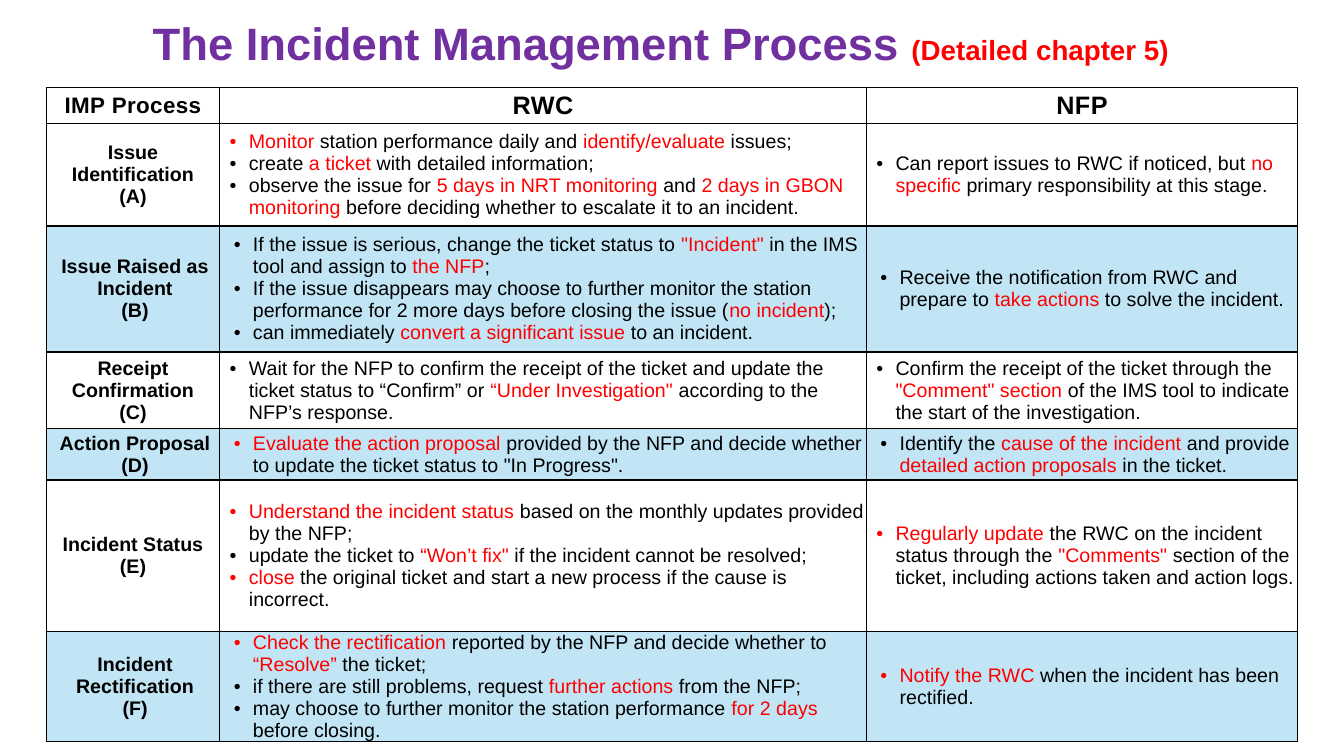
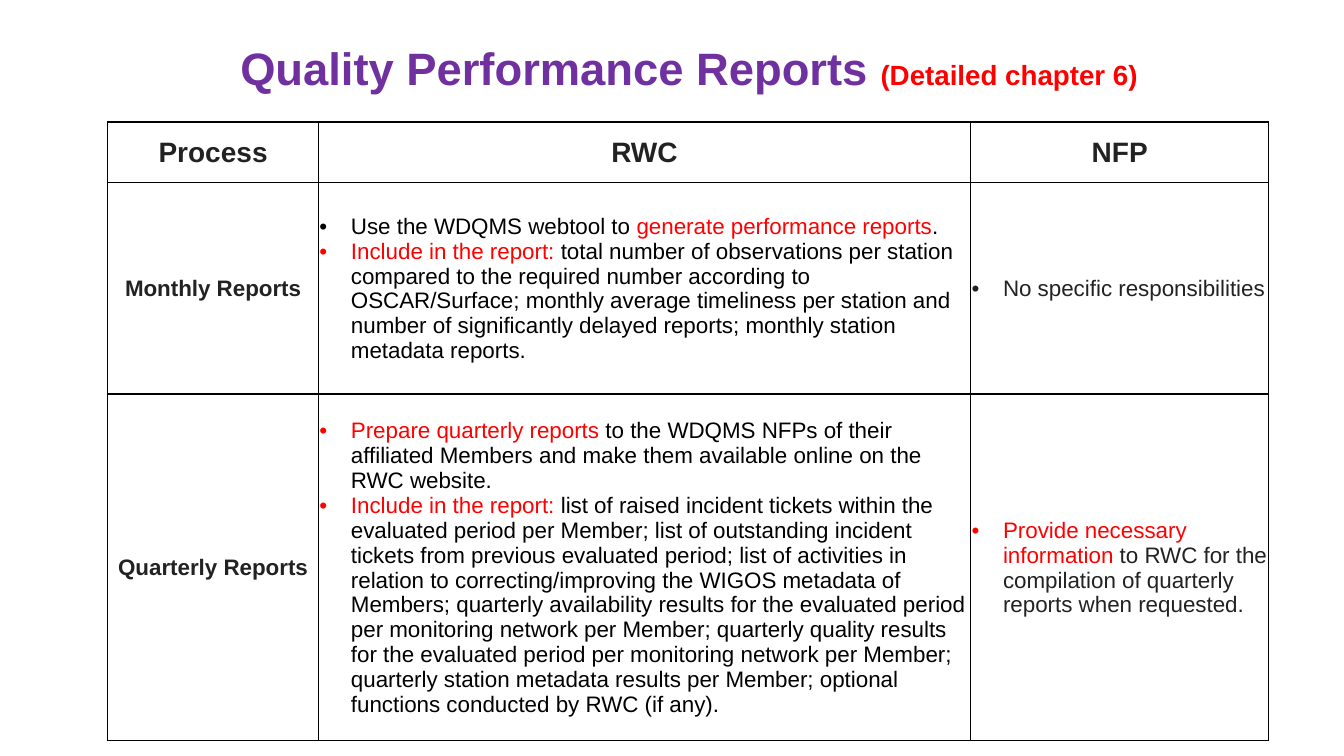
from lxml.etree import SubElement
from pptx import Presentation
from pptx.dml.color import RGBColor
from pptx.enum.text import MSO_ANCHOR as Anchor, MSO_AUTO_SIZE as AutoSize, PP_ALIGN as Align
from pptx.oxml.ns import qn
from pptx.util import Pt

FONT = "Arial"
COLORS = {
    "title": "7030A0",
    "accent": "FF0000",
    "black": "000000",
    "gray": "222222",
    "band": "C1E5F5",
}

INCIDENT_ROWS = [
    ("IMP Process", "RWC", "NFP"),
    ("Issue Identification\n(A)",
     ["*Monitor* station performance daily and *identify/evaluate* issues;",
      "create *a ticket* with detailed information;",
      "observe the issue for *5 days in NRT monitoring* and *2 days in GBON monitoring* "
      "before deciding whether to escalate it to an incident."],
     ["Can report issues to RWC if noticed, but *no specific* primary responsibility at this stage."]),
    ("Issue Raised as Incident\n(B)",
     ["If the issue is serious, change the ticket status to *\"Incident\"* in the IMS tool "
      "and assign to *the NFP*;",
      "If the issue disappears may choose to further monitor the station performance "
      "for 2 more days before closing the issue (*no incident*);",
      "can immediately *convert a significant issue* to an incident."],
     ["Receive the notification from RWC and prepare to *take actions* to solve the incident."]),
    ("Receipt Confirmation\n(C)",
     ["Wait for the NFP to confirm the receipt of the ticket and update the ticket status to "
      "“Confirm” or *“Under Investigation\"* according to the NFP’s response."],
     ["Confirm the receipt of the ticket through the *\"Comment\" section* of the IMS tool "
      "to indicate the start of the investigation."]),
    ("Action Proposal\n(D)",
     ["*Evaluate the action proposal* provided by the NFP and decide whether to update "
      "the ticket status to \"In Progress\"."],
     ["Identify the *cause of the incident* and provide *detailed action proposals* in the ticket."]),
    ("Incident Status\n(E)",
     ["*Understand the incident status* based on the monthly updates provided by the NFP;",
      "update the ticket to *“Won’t fix\"* if the incident cannot be resolved;",
      "*close* the original ticket and start a new process if the cause is incorrect."],
     ["*Regularly update* the RWC on the incident status through the *\"Comments\"* section "
      "of the ticket, including actions taken and action logs."]),
    ("Incident Rectification\n(F)",
     ["*Check the rectification* reported by the NFP and decide whether to *“Resolve”* the ticket;",
      "if there are still problems, request *further actions* from the NFP;",
      "may choose to further monitor the station performance *for 2 days* before closing."],
     ["*Notify the RWC* when the incident has been rectified."]),
]

REPORT_ROWS = [
    ("Process", "RWC", "NFP"),
    ("Monthly Reports",
     ["Use the WDQMS webtool to *generate performance reports*.",
      "*Include in the report:* total number of observations per station compared to the "
      "required number according to OSCAR/Surface; monthly average timeliness per station "
      "and number of significantly delayed reports; monthly station metadata reports."],
     ["No specific responsibilities"]),
    ("Quarterly Reports",
     ["*Prepare quarterly reports* to the WDQMS NFPs of their affiliated Members and make "
      "them available online on the RWC website.",
      "*Include in the report:* list of raised incident tickets within the evaluated period "
      "per Member; list of outstanding incident tickets from previous evaluated period; list "
      "of activities in relation to correcting/improving the WIGOS metadata of Members; "
      "quarterly availability results for the evaluated period per monitoring network per "
      "Member; quarterly quality results for the evaluated period per monitoring network per "
      "Member; quarterly station metadata results per Member; optional functions conducted "
      "by RWC (if any)."],
     ["*Provide necessary information* to RWC for the compilation of quarterly reports when requested."]),
]

SLIDES = [
    {
        "title": "The Incident Management Process *(Detailed chapter 5)*",
        "title_at": (3.6, 12.2),
        "table_at": (33.1, 62.6),
        "columns": (123.8, 461.9, 308.2),
        "heights": (25.5, 73.4, 90, 54.7, 36.7, 108, 73.4),
        "rows": INCIDENT_ROWS,
        "header_sizes": (16, 18, 18),
        "header_spacing": 30,
        "size": 14,
        "colors": ("black", "black", "black"),
        "indent": (20.9, 13.7),
        "margins": (0, 0, 0, 0),
        "banded": True,
    },
    {
        "title": "Quality Performance Reports *(Detailed chapter 6)*",
        "title_at": (23.8, 30.2),
        "table_at": (77, 87.1),
        "columns": (150.5, 465.8, 213.1),
        "heights": (43.2, 151.2, 247.7),
        "rows": REPORT_ROWS,
        "header_sizes": (20, 20, 20),
        "header_spacing": 0,
        "size": 16,
        "colors": ("gray", "black", "gray"),
        "indent": (22.5, 22.5),
        "margins": (0.7, 0.7, 0.7, 0),
        "banded": False,
    },
]


def rgb(name):
    return RGBColor.from_string(COLORS[name])


def write_text(frame, lines, size, color, bold=False, align=Align.CENTER,
               accent_size=None, indent=None, spacing=0, line_spacing=None):
    for index, line in enumerate(lines):
        paragraph = frame.paragraphs[0] if index == 0 else frame.add_paragraph()
        paragraph.alignment = align
        if line_spacing:
            paragraph.line_spacing = line_spacing
        if indent:
            left, hanging = indent
            properties = paragraph._p.get_or_add_pPr()
            properties.set("marL", str(Pt(left)))
            properties.set("indent", str(-Pt(hanging)))
            SubElement(properties, qn("a:buFont"), typeface=FONT)
            SubElement(properties, qn("a:buChar"), char="•")
        for part, text in enumerate(line.split("*")):
            if not text:
                continue
            accented = part % 2 == 1
            run = paragraph.add_run()
            run.text = text
            run.font.name = FONT
            run.font.bold = bold
            run.font.size = Pt(accent_size if accented and accent_size else size)
            run.font.color.rgb = rgb("accent" if accented else color)
            if spacing:
                run._r.get_or_add_rPr().set("spc", str(spacing))


def style_cell(cell, margins, fill):
    cell.vertical_anchor = Anchor.MIDDLE
    cell.margin_left, cell.margin_top, cell.margin_right, cell.margin_bottom = map(Pt, margins)
    properties = cell._tc.get_or_add_tcPr()
    for side in ("a:lnL", "a:lnR", "a:lnT", "a:lnB"):
        line = SubElement(properties, qn(side), w=str(Pt(1)))
        SubElement(SubElement(line, qn("a:solidFill")), qn("a:srgbClr"), val=COLORS["black"])
    if fill:
        cell.fill.solid()
        cell.fill.fore_color.rgb = rgb(fill)
    else:
        cell.fill.background()


def add_title(slide, text, position):
    title = slide.shapes.title
    title.left, title.top = map(Pt, position)
    title.width, title.height = Pt(936.7), Pt(41)
    frame = title.text_frame
    frame.word_wrap = True
    frame.auto_size = AutoSize.NONE
    frame.vertical_anchor = Anchor.MIDDLE
    write_text(frame, [text], 32.4, "title", bold=True, accent_size=19.8, line_spacing=0.9)


def add_process_table(slide, content):
    rows, columns, heights = content["rows"], content["columns"], content["heights"]
    left, top = content["table_at"]
    table = slide.shapes.add_table(len(rows), len(columns), Pt(left), Pt(top),
                                   Pt(sum(columns)), Pt(sum(heights))).table
    table.first_row = table.horz_banding = False
    for column, width in zip(table.columns, columns):
        column.width = Pt(width)
    for row_index, (row, height) in enumerate(zip(rows, heights)):
        table.rows[row_index].height = Pt(height)
        shaded = content["banded"] and row_index > 0 and row_index % 2 == 0
        margins = (2.9, 0, 0, 0) if shaded else content["margins"]
        for column_index, value in enumerate(row):
            cell = table.cell(row_index, column_index)
            style_cell(cell, margins, "band" if shaded else None)
            color = content["colors"][column_index]
            if row_index == 0:
                write_text(cell.text_frame, [value], content["header_sizes"][column_index],
                           content["colors"][0], bold=True, spacing=content["header_spacing"])
            elif column_index == 0:
                write_text(cell.text_frame, value.split("\n"), content["size"], color, bold=True)
            else:
                write_text(cell.text_frame, value, content["size"], color,
                           align=Align.LEFT, indent=content["indent"])


def main():
    presentation = Presentation()
    presentation.slide_width, presentation.slide_height = Pt(960), Pt(540)
    for content in SLIDES:
        slide = presentation.slides.add_slide(presentation.slide_layouts[5])
        add_process_table(slide, content)
        add_title(slide, content["title"], content["title_at"])
    presentation.save("out.pptx")


if __name__ == "__main__":
    main()
